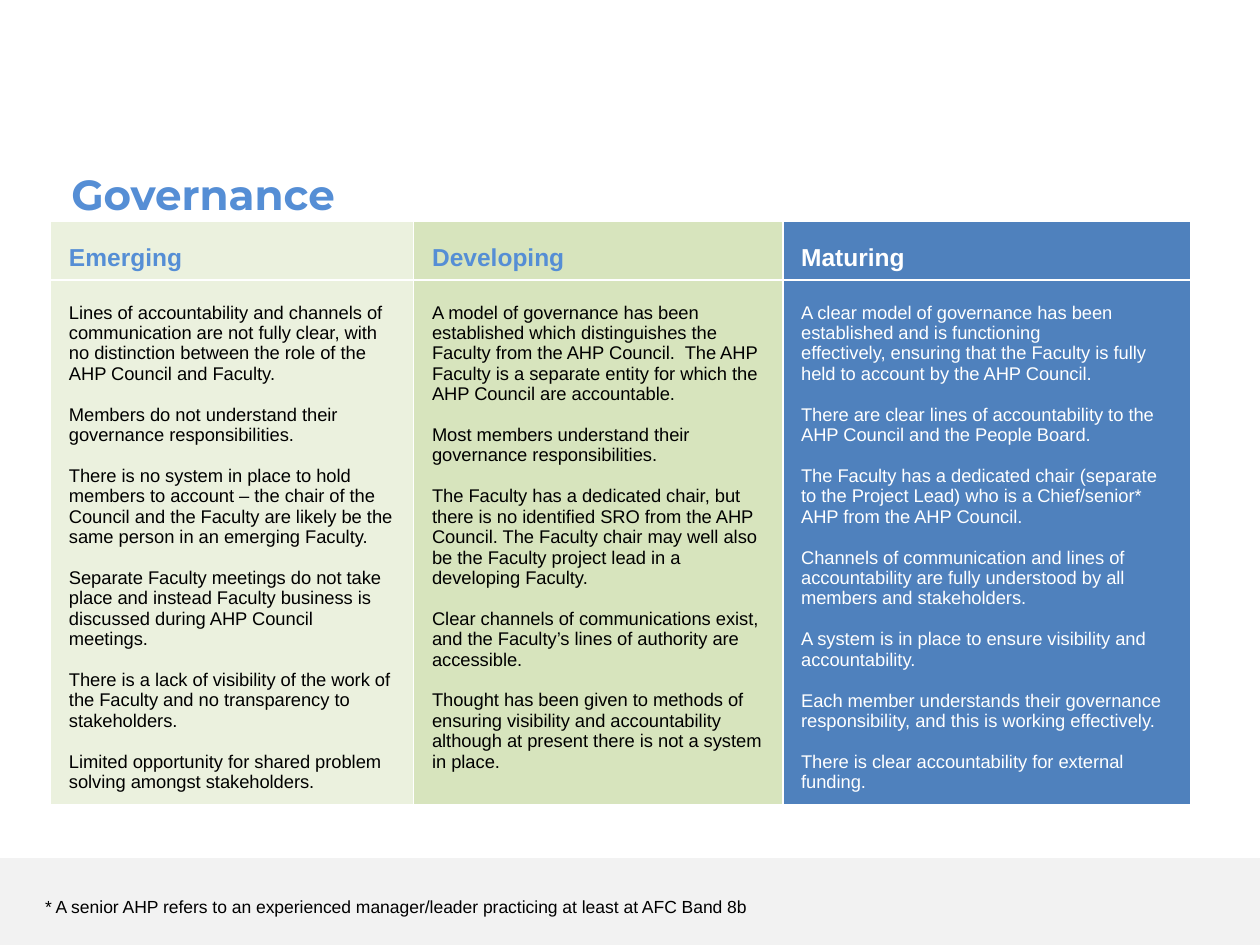
"""Build the governance maturity slide."""
import lxml.etree
import pptx
import pptx.dml.color
import pptx.enum.shapes
import pptx.enum.text
import pptx.oxml.ns
import pptx.util

Cm = pptx.util.Cm
Pt = pptx.util.Pt
RGBColor = pptx.dml.color.RGBColor

WHITE = RGBColor(0xFF, 0xFF, 0xFF)
BLACK = RGBColor(0x00, 0x00, 0x00)
ACCENT = RGBColor(0x55, 0x8E, 0xD5)
BAND_GREY = RGBColor(0xF2, 0xF2, 0xF2)
PALE_GREEN = RGBColor(0xEB, 0xF1, 0xDE)
GREEN = RGBColor(0xD7, 0xE4, 0xBD)
BLUE = RGBColor(0x4F, 0x81, 0xBD)

STAGES = [
    ("Emerging", 7.32, PALE_GREEN, ACCENT, BLACK, [
        "Lines of accountability and channels of communication are not fully clear, with no distinction between the role of the AHP Council and Faculty.",
        "Members do not understand their governance responsibilities.",
        "There is no system in place to hold members to account – the chair of the Council and the Faculty are likely be the same person in an emerging Faculty.",
        "Separate Faculty meetings do not take place and instead Faculty business is discussed during AHP Council meetings.",
        "There is a lack of visibility of the work of the Faculty and no transparency to stakeholders.",
        "Limited opportunity for shared problem solving amongst stakeholders.",
    ]),
    ("Developing", 7.44, GREEN, ACCENT, BLACK, [
        "A model of governance has been established which distinguishes the Faculty from the AHP Council.  The AHP Faculty is a separate entity for which the AHP Council are accountable.",
        "Most members understand their governance responsibilities.",
        "The Faculty has a dedicated chair, but there is no identified SRO from the AHP Council. The Faculty chair may well also be the Faculty project lead in a developing Faculty.",
        "Clear channels of communications exist, and the Faculty’s lines of authority are accessible.",
        "Thought has been given to methods of ensuring visibility and accountability although at present there is not a system in place.",
    ]),
    ("Maturing", 8.23, BLUE, WHITE, WHITE, [
        "A clear model of governance has been established and is functioning\veffectively, ensuring that the Faculty is fully held to account by the AHP Council.",
        "There are clear lines of accountability to the AHP Council and the People Board.",
        "The Faculty has a dedicated chair (separate to the Project Lead) who is a Chief/senior* AHP from the AHP Council.",
        "Channels of communication and lines of accountability are fully understood by all\vmembers and stakeholders.",
        "A system is in place to ensure visibility and accountability.",
        "Each member understands their governance responsibility, and this is working effectively.",
        "There is clear accountability for external funding.",
    ]),
]


class SlideBuilder:
    """Hold the style and the current page, and draw each kind of element."""

    font = "Arial"
    heading_font = "Montserrat"
    body_size = 10.5
    paragraph_gap = Pt(11.7)

    def __init__(self, page):
        self.page = page

    def add_text(self, frame, paragraphs, size, color, bold=False, font=None):
        for index, text in enumerate(paragraphs):
            para = frame.add_paragraph() if index else frame.paragraphs[0]
            if index:
                para.space_before = self.paragraph_gap
            for number, line in enumerate(text.split("\v")):
                if number:
                    para.add_line_break()
                span = para.add_run()
                span.text = line
                span.font.name = font or self.font
                span.font.size = Pt(size)
                span.font.bold = bold
                span.font.color.rgb = color

    def band(self, left, top, width, height, color):
        box = self.page.shapes.add_shape(
            pptx.enum.shapes.MSO_SHAPE.RECTANGLE,
            Cm(left), Cm(top), Cm(width), Cm(height))
        box.shadow.inherit = False
        box.fill.solid()
        box.fill.fore_color.rgb = color
        box.line.fill.background()

    def label(self, left, top, width, height, text, size, color, wrap=True, **style):
        box = self.page.shapes.add_textbox(Cm(left), Cm(top), Cm(width), Cm(height))
        box.text_frame.word_wrap = wrap
        box.text_frame.auto_size = pptx.enum.text.MSO_AUTO_SIZE.SHAPE_TO_FIT_TEXT
        self.add_text(box.text_frame, [text], size, color, **style)

    def cell(self, cell, color):
        cell.margin_left = cell.margin_right = Cm(0.37)
        cell.margin_top, cell.margin_bottom = Cm(0.46), Cm(0.1)
        properties = cell._tc.get_or_add_tcPr()
        qn = pptx.oxml.ns.qn
        for side in ("lnL", "lnR", "lnT", "lnB"):
            border = lxml.etree.SubElement(properties, qn(f"a:{side}"), w=str(Pt(1)))
            fill = lxml.etree.SubElement(border, qn("a:solidFill"))
            lxml.etree.SubElement(fill, qn("a:srgbClr"), val=str(WHITE))
        cell.fill.solid()
        cell.fill.fore_color.rgb = color

    def table(self, left, top, row_heights, stages):
        width = sum(stage[1] for stage in stages)
        table = self.page.shapes.add_table(
            len(row_heights), len(stages), Cm(left), Cm(top),
            Cm(width), Cm(sum(row_heights))).table
        for row, height in zip(table.rows, row_heights):
            row.height = Cm(height)
        for column, stage in enumerate(stages):
            name, column_width, color, heading_color, body_color, points = stage
            table.columns[column].width = Cm(column_width)
            heading, body = table.cell(0, column), table.cell(1, column)
            self.cell(heading, color)
            self.cell(body, color)
            self.add_text(heading.text_frame, [name], 14, heading_color, bold=True)
            self.add_text(body.text_frame, points, self.body_size, body_color)


def main():
    deck = pptx.Presentation()
    deck.slide_width, deck.slide_height = Cm(25.4), Cm(19.05)
    builder = SlideBuilder(deck.slides.add_slide(deck.slide_layouts[6]))
    builder.band(0, 17.3, 25.4, 1.75, BAND_GREY)
    builder.table(1.02, 4.47, [1.17, 10.59], STAGES)
    builder.label(1.19, 3.28, 6.1, 1.27, "Governance", 24, ACCENT,
                  wrap=False, bold=True, font=builder.heading_font)
    builder.label(0.66, 17.93, 19.35, 0.69,
                  "* A senior AHP refers to an experienced manager/leader practicing at least at AFC Band 8b",
                  10, BLACK)
    deck.save("out.pptx")


if __name__ == "__main__":
    main()
